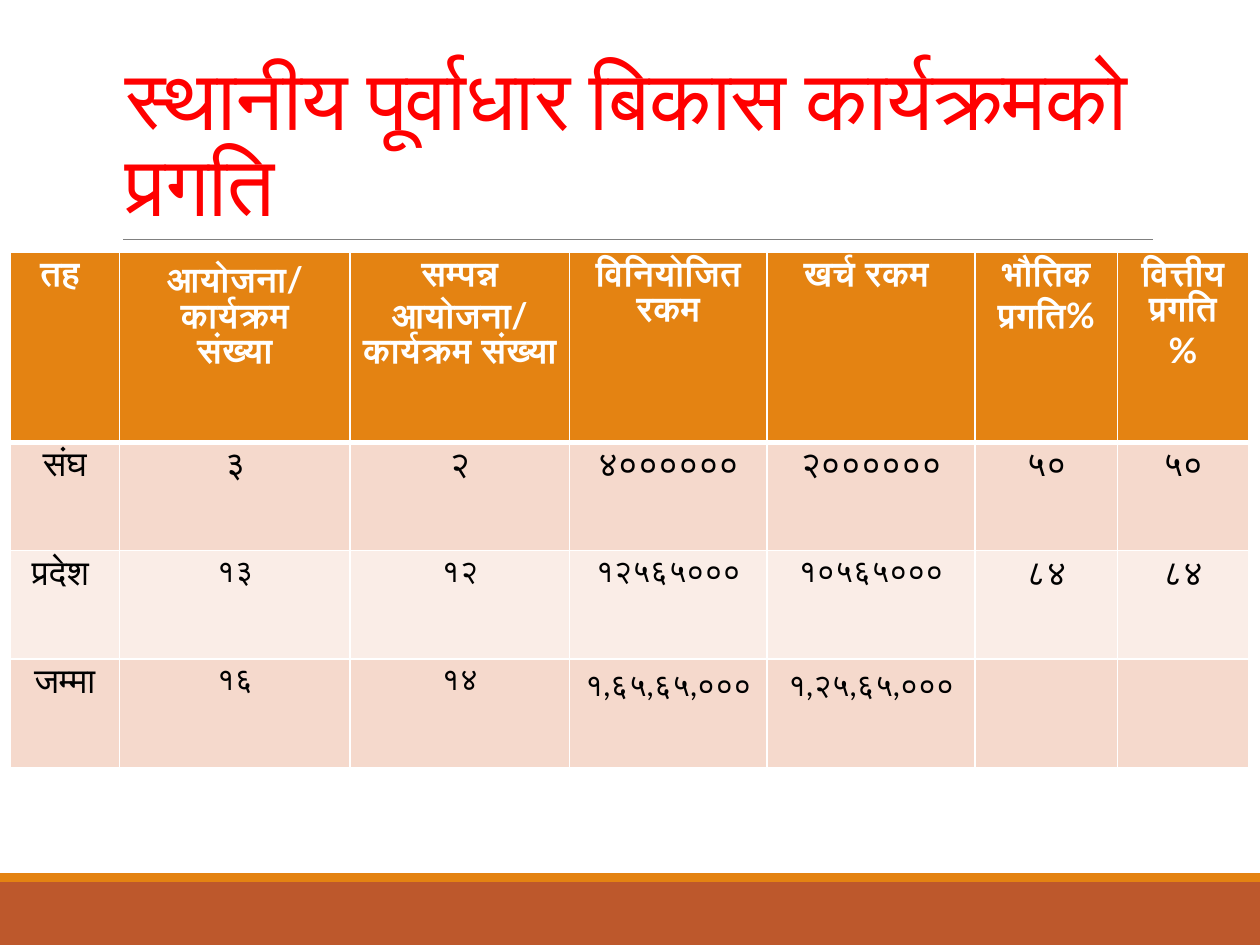
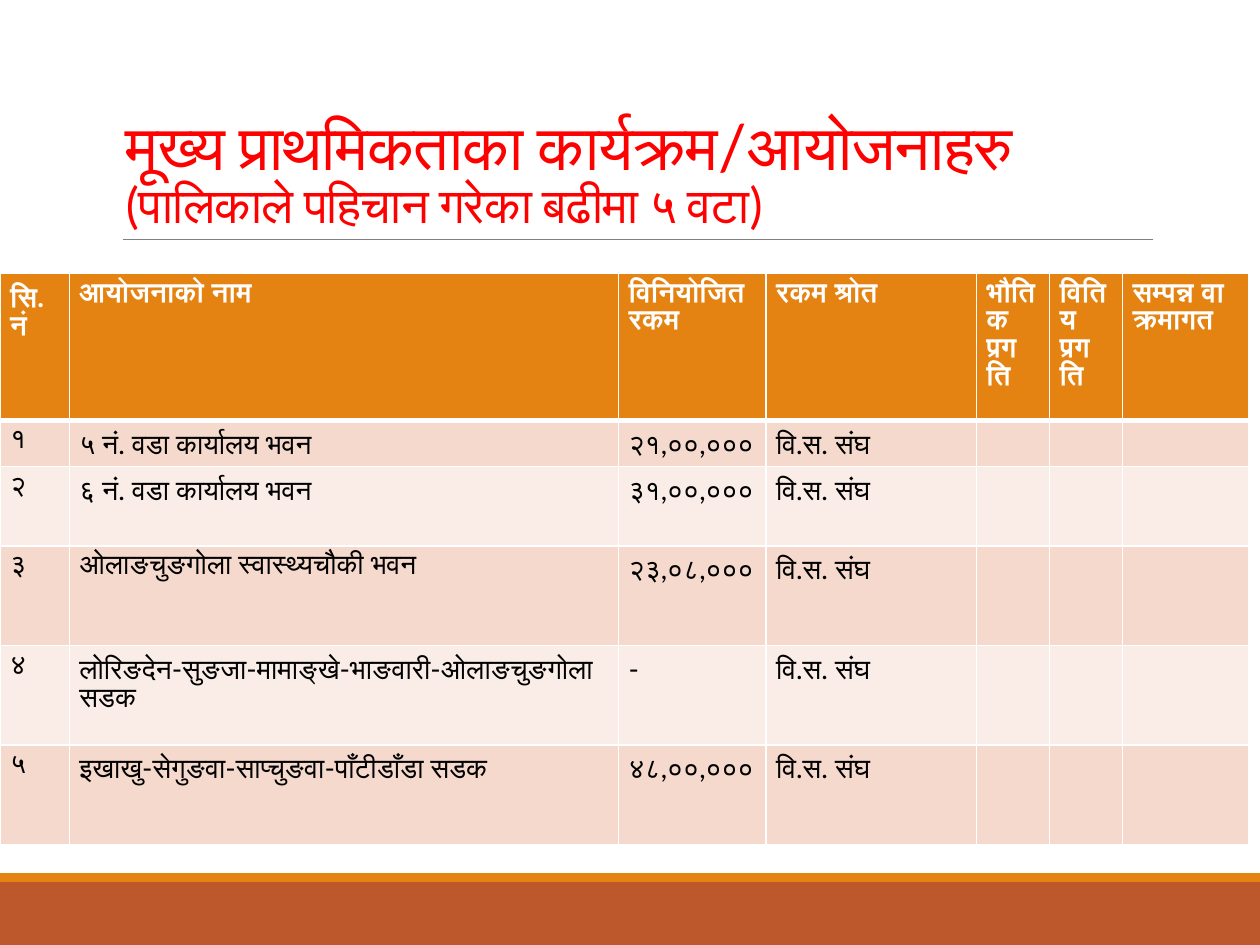
from lxml import etree
from pptx import Presentation
from pptx.dml.color import RGBColor
from pptx.enum.shapes import MSO_CONNECTOR, MSO_SHAPE
from pptx.enum.text import MSO_ANCHOR, PP_ALIGN
from pptx.oxml.ns import qn
from pptx.util import Inches, Pt

RECTANGLE = MSO_SHAPE.RECTANGLE
STRAIGHT = MSO_CONNECTOR.STRAIGHT
BOTTOM = MSO_ANCHOR.BOTTOM
LEFT, CENTER = PP_ALIGN.LEFT, PP_ALIGN.CENTER

FONT = "Lato"
WHITE, BLACK, RED, GRAY = "FFFFFF", "000000", "FF0000", "808080"
ORANGE, RUST = "E48312", "BD582C"
BANDS = ("F5D9CC", "FAEDE7")


def color(value):
    """Turn a hex string into a colour."""
    return RGBColor.from_string(value)


def write(paragraph, text, *, size, fill, bold=False, spacing=0):
    """Add a formatted run to a paragraph."""
    run = paragraph.add_run()
    run.text = text
    run.font.name = FONT
    run.font.size = Pt(size)
    run.font.bold = bold
    run.font.color.rgb = color(fill)
    if spacing:
        run.font._element.set("spc", str(int(spacing * 100)))


def set_borders(cell, top, bottom):
    """Draw white borders around a table cell."""
    properties = cell._tc.get_or_add_tcPr()
    for side, width in (("L", 1), ("R", 1), ("T", top), ("B", bottom)):
        line = etree.SubElement(properties, qn(f"a:ln{side}"), w=str(Pt(width)))
        solid = etree.SubElement(line, qn("a:solidFill"))
        etree.SubElement(solid, qn("a:srgbClr"), val=WHITE)


class ProgressDeck:
    """Hold the shared style and the current slide."""

    def __init__(self):
        """Start a presentation of 10 by 7.5 inches."""
        self.presentation = Presentation()
        self.presentation.slide_width = Inches(10)
        self.presentation.slide_height = Inches(7.5)
        self.slide = None

    def add_slide(self, title_lines):
        """Add a slide with its bands, rule and title."""
        layout = self.presentation.slide_layouts[6]
        self.slide = self.presentation.slides.add_slide(layout)
        self.add_band(7, 0.5, RUST)
        self.add_band(6.93, 0.07, ORANGE)
        self.add_rule()
        self.add_title(title_lines)

    def add_band(self, top, height, fill):
        """Add a full-width footer band."""
        shape = self.slide.shapes.add_shape(
            RECTANGLE, 0, Inches(top), Inches(10), Inches(height))
        shape.shadow.inherit = False
        shape.fill.solid()
        shape.fill.fore_color.rgb = color(fill)
        shape.line.fill.background()

    def add_rule(self):
        """Add the thin line under the title."""
        rule = self.slide.shapes.add_connector(
            STRAIGHT, Inches(0.98), Inches(1.9), Inches(9.15), Inches(1.9))
        rule.line.color.rgb = color(GRAY)
        rule.line.width = Pt(0.5)
        etree.SubElement(rule._element.spPr, qn("a:effectLst"))

    def add_title(self, lines):
        """Add the red title from pairs of text and size."""
        shape = self.slide.shapes.add_textbox(
            Inches(0.9), Inches(0.31), Inches(8.25), Inches(1.59))
        frame = shape.text_frame
        frame.word_wrap = True
        frame.vertical_anchor = BOTTOM
        paragraph = frame.paragraphs[0]
        paragraph.line_spacing = 0.85
        for index, (text, size) in enumerate(lines):
            if index:
                paragraph.add_line_break()
            write(paragraph, text, size=size, fill=RED, spacing=-0.5)

    def add_table(self, left, top, widths, heights, rows, *, size_at, align, margin):
        """Add a table with an orange header and banded rows."""
        table = self.slide.shapes.add_table(
            len(heights), len(widths), Inches(left), Inches(top),
            Inches(sum(widths)), Inches(sum(heights))).table
        for column, width in zip(table.columns, widths):
            column.width = Inches(width)
        for row, height in zip(table.rows, heights):
            row.height = Inches(height)
        for row, texts in enumerate(rows):
            for column, text in enumerate(texts):
                cell = table.cell(row, column)
                cell.margin_left = cell.margin_right = Inches(margin)
                self.fill_cell(cell, row, text, size_at(row, column), align)

    def fill_cell(self, cell, row, text, size, align):
        """Style one table cell and write its paragraphs."""
        header = row == 0
        set_borders(cell, 3 if row == 1 else 1, 3 if header else 1)
        cell.fill.solid()
        cell.fill.fore_color.rgb = color(ORANGE if header else BANDS[(row - 1) % 2])
        frame = cell.text_frame
        for index, line in enumerate(text.split("\n")):
            paragraph = frame.add_paragraph() if index else frame.paragraphs[0]
            paragraph.alignment = align
            if line:
                write(paragraph, line, size=size, bold=header,
                      fill=WHITE if header else BLACK)
            else:
                etree.SubElement(paragraph._p, qn("a:endParaRPr"), sz=str(size * 100))


def add_progress_slide(deck):
    """Build the slide on infrastructure programme progress."""
    deck.add_slide([("स्थानीय पूर्वाधार बिकास कार्यक्रमको प्रगति", 48)])
    rows = [
        ("तह ", "आयोजना/कार्यक्रम\nसंख्या", "सम्पन्न आयोजना/\nकार्यक्रम संख्या",
         "विनियोजित रकम", "खर्च रकम ", "भौतिक प्रगति%", "वित्तीय प्रगति %"),
        ("संघ", "३", "२", "४००००००", "२००००००", "५०", "५०"),
        ("प्रदेश ", "१३", "१२", "१२५६५०००", "१०५६५०००", "८४", "८४"),
        ("जम्मा", "१६", "१४", "१,६५,६५,०००", "१,२५,६५,०००", "", ""),
    ]
    deck.add_table(
        0.08, 2, [0.87, 1.83, 1.74, 1.57, 1.65, 1.13, 1.04],
        [1.51] + [0.86] * 3, rows, align=CENTER, margin=0.1,
        size_at=lambda row, column: 18 if row > 1 and 1 <= column <= 4 else 20)


def add_priority_slide(deck):
    """Build the slide on main priority projects."""
    deck.add_slide([("मूख्य प्राथमिकताका कार्यक्रम/आयोजनाहरु", 36),
                    ("(पालिकाले पहिचान गरेका बढीमा ५ वटा)", 28)])
    projects = [
        ("१", "५ नं. वडा कार्यालय भवन", "२१,००,०००"),
        ("२", "६ नं. वडा कार्यालय भवन", "३१,००,०००"),
        ("३", "ओलाङचुङगोला स्वास्थ्यचौकी भवन", "२३,०८,०००"),
        ("४", "लोरिङदेन-सुङजा-मामाङ्खे-भाङवारी-ओलाङचुङगोला सडक", "-"),
        ("५", "इखाखु-सेगुङवा-साप्चुङवा-पाँटीडाँडा सडक", "४८,००,०००"),
    ]
    header = ("सि.नं", "आयोजनाको नाम", "विनियोजित रकम", "रकम श्रोत",
              "भौतिक प्रगति", "वितिय प्रगति", "सम्पन्न वा क्रमागत")
    rows = [header] + [project + ("वि.स. संघ", "", "", "") for project in projects]
    deck.add_table(
        0, 2.17, [0.55, 4.36, 1.17, 1.67, 0.58, 0.58, 1],
        [0.98, 0.36, 0.63] + [0.79] * 3, rows, align=LEFT, margin=0.08,
        size_at=lambda row, column: 16)


def main():
    """Build and save the presentation."""
    deck = ProgressDeck()
    add_progress_slide(deck)
    add_priority_slide(deck)
    deck.presentation.save("out.pptx")


if __name__ == "__main__":
    main()
